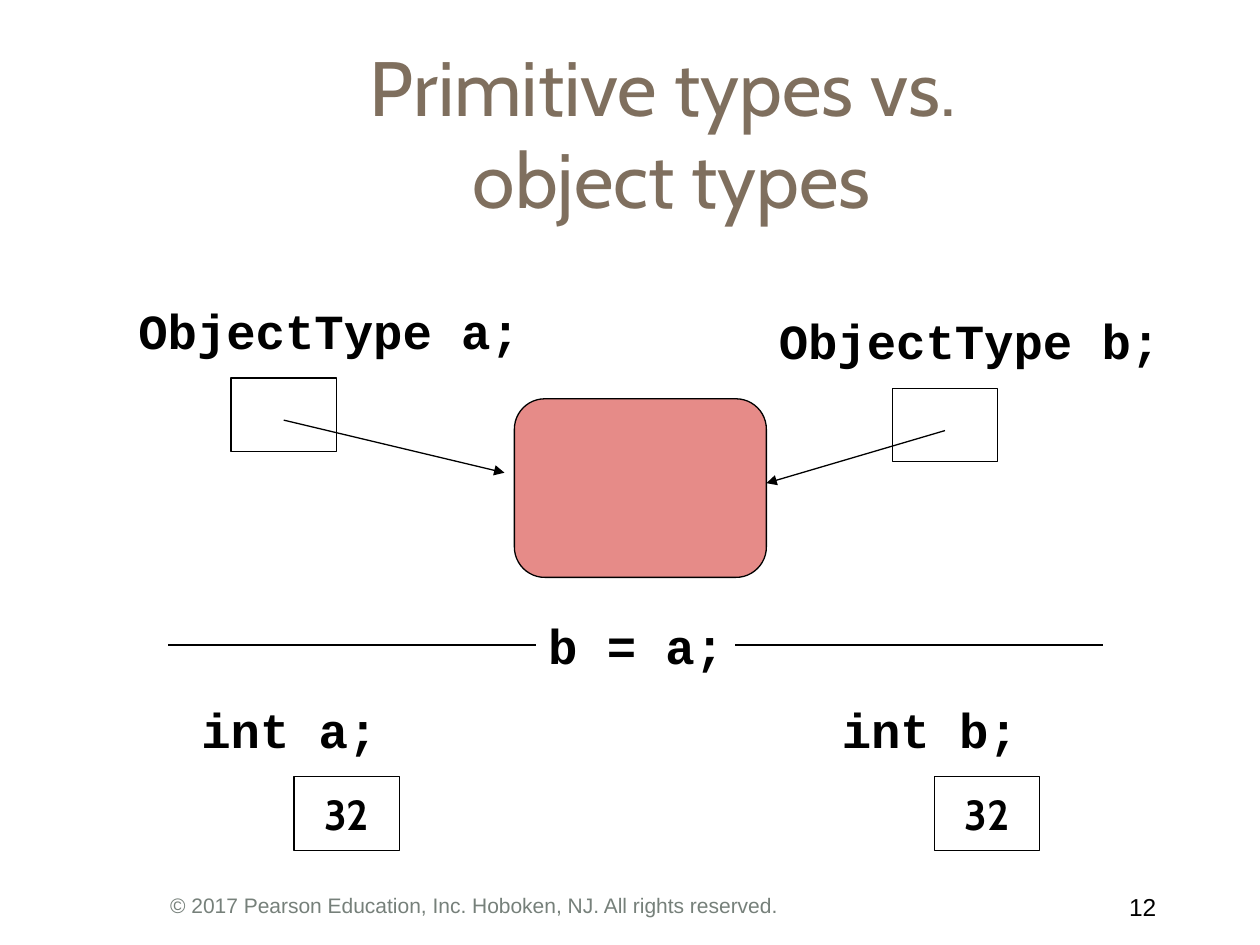
from dataclasses import dataclass

from lxml import etree
from pptx import Presentation
from pptx.dml.color import RGBColor
from pptx.enum.shapes import MSO_CONNECTOR, MSO_SHAPE
from pptx.enum.text import MSO_ANCHOR, MSO_AUTO_SIZE, PP_ALIGN
from pptx.oxml.ns import qn
from pptx.util import Cm, Pt

RECT, ROUND = MSO_SHAPE.RECTANGLE, MSO_SHAPE.ROUNDED_RECTANGLE
STRAIGHT = MSO_CONNECTOR.STRAIGHT
LEFT, MID, RIGHT = PP_ALIGN.LEFT, PP_ALIGN.CENTER, PP_ALIGN.RIGHT
TOP, CENTRE = MSO_ANCHOR.TOP, MSO_ANCHOR.MIDDLE
FIXED, GROW = MSO_AUTO_SIZE.NONE, MSO_AUTO_SIZE.SHAPE_TO_FIT_TEXT


@dataclass(frozen=True)
class Theme:
    ink: str = "000000"
    rose: str = "E68B88"
    rule: float = 0.75
    title: tuple = ("Cabin", 44, False, "7F6F5E")
    code: tuple = ("Courier New", 28, True, "000000")
    value: tuple = ("Cabin", 24, True, "000000")
    note: tuple = ("Arial", 12, False, "76807A")
    page: tuple = ("Arial", 14, False, "000000")


THEME = Theme()
CELL_W, CELL_H = 2.12, 1.48
CODE_H = 1.44
DROP = 1.69


def apply(target, values):
    for name, value in values.items():
        setattr(target, name, value)


def write(frame, text, style, align=LEFT, anchor=TOP, wrap=True, fit=FIXED):
    apply(frame, {"word_wrap": wrap, "auto_size": fit,
                  "vertical_anchor": anchor})
    frame.text = text
    face, size, bold, color = style
    for para in frame.paragraphs:
        para.alignment = align
        for run in para.runs:
            apply(run.font, {"name": face, "size": Pt(size), "bold": bold})
            run.font.color.rgb = RGBColor.from_string(color)


def ink(line):
    line.color.rgb = RGBColor.from_string(THEME.ink)
    line.width = Pt(THEME.rule)


def label(slide, box, text, style, **format):
    shape = slide.shapes.add_textbox(*map(Cm, box))
    write(shape.text_frame, text, style, **format)


def block(slide, kind, box, fill=None):
    shape = slide.shapes.add_shape(kind, *map(Cm, box))
    shape.shadow.inherit = False
    ink(shape.line)
    if fill:
        shape.fill.solid()
        shape.fill.fore_color.rgb = RGBColor.from_string(fill)
    else:
        shape.fill.background()
    return shape


def stroke(slide, start, end, arrow=False):
    line = slide.shapes.add_connector(STRAIGHT, *map(Cm, start + end))
    ink(line.line)
    if arrow:
        tip = etree.SubElement(line.line._get_or_add_ln(), qn("a:tailEnd"))
        tip.set("type", "triangle")
    etree.SubElement(line._element.spPr, qn("a:effectLst"))


def heading(slide, box, text):
    shape = slide.shapes.title
    names = ("left", "top", "width", "height")
    apply(shape, dict(zip(names, map(Cm, box))))
    write(shape.text_frame, text, THEME.title, align=MID, anchor=CENTRE)


def holder(slide, box, code, shift, value=None, reach=None):
    x, y, wide = box
    label(slide, (x, y, wide, CODE_H), code, THEME.code, fit=GROW)
    left, top = x + shift, y + DROP
    cell = block(slide, RECT, (left, top, CELL_W, CELL_H))
    if value:
        write(cell.text_frame, value, THEME.value, MID, CENTRE, wrap=False)
    if reach:
        start = (left + CELL_W / 2, top + 0.85)
        stroke(slide, start, (start[0] + reach, start[1] + 1.06), arrow=True)


def divide(slide, box, code):
    x, y, wide = box
    arm, level = 7.41, y + 0.72
    label(slide, (x + arm, y, 4.45, CODE_H), code, THEME.code, fit=GROW)
    for left in (x, x + wide - arm):
        stroke(slide, (left + arm, level), (left, level))


def footer(slide, box, note, page):
    x, y, wide, high = box
    tail = 1.47
    label(slide, (x, y, wide - tail, high), note, THEME.note)
    label(slide, (x + wide - tail, y, tail, high), page, THEME.page,
          align=RIGHT)


def main():
    deck = Presentation()
    apply(deck, {"slide_width": Cm(25.4), "slide_height": Cm(19.05)})
    slide = deck.slides.add_slide(deck.slide_layouts[5])
    heading(slide, (2.75, 1.06, 21.59, 3.18),
            "Primitive types vs. \vobject types")
    body = block(slide, ROUND, (10.37, 8.04, 5.08, 3.6), THEME.rose)
    body.adjustments[0] = 0.17
    holder(slide, (2.54, 5.93, 9.95), "ObjectType a;", 2.12, reach=4.45)
    holder(slide, (15.45, 6.14, 8.47), "ObjectType b;", 2.54, reach=-3.6)
    divide(slide, (3.39, 12.28, 18.84), "b = a;")
    for name, left in (("a", 3.81), ("b", 16.72)):
        holder(slide, (left, 13.97, 5.72), f"int {name};", 2.12, value="32")
    footer(slide, (3.18, 17.86, 20.52, 0.84),
           "© 2017 Pearson Education, Inc. Hoboken, NJ. All rights reserved.",
           "12 ")
    deck.save("out.pptx")


if __name__ == "__main__":
    main()
